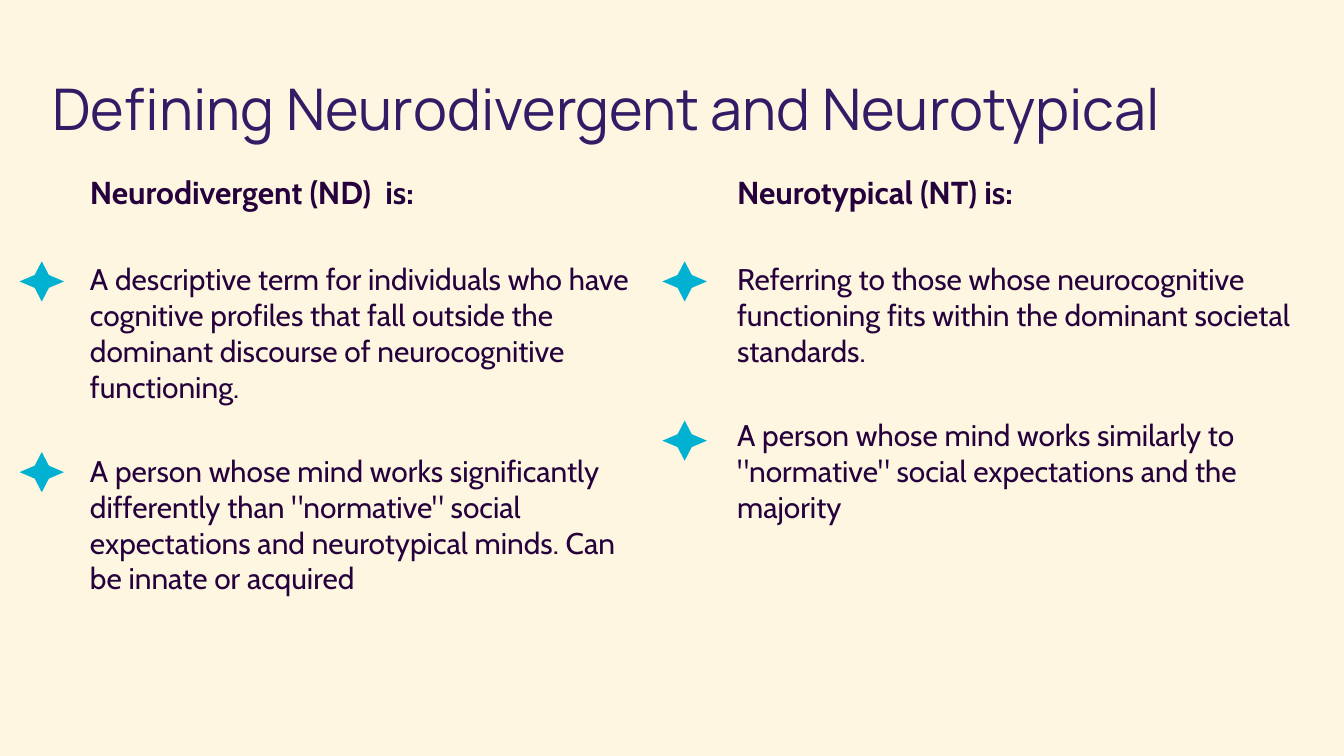
from pptx import Presentation
from pptx.dml.color import RGBColor
from pptx.enum.text import MSO_ANCHOR as Anchor
from pptx.util import Cm, Pt

CREAM = RGBColor(0xFE, 0xF6, 0xE0)
PURPLE = RGBColor(0x35, 0x1B, 0x65)
DARK_PURPLE = RGBColor(0x25, 0x00, 0x3C)
TURQUOISE = RGBColor(0x00, 0xB1, 0xD2)

TITLE_FONT, BODY_FONT = "Manrope", "Cabin"
STAR_WIDTH, STAR_HEIGHT = 1.68, 1.52
COLUMN_TOP, COLUMN_WIDTH = 6.4, 21.8
FIRST_STAR_TOP = 9.88

# text left, text height, star left, second star top, heading, definitions
COLUMNS = [
    (3.15, 19, 0.74, 17.09, "Neurodivergent (ND)  is:", [
        "A descriptive term for individuals who have cognitive profiles that "
        "fall outside the dominant discourse of neurocognitive functioning.",
        'A person whose mind works significantly differently than "normative" '
        "social expectations and neurotypical minds. Can be innate or acquired",
    ]),
    (27.61, 17.09, 25.04, 15.9, "Neurotypical (NT) is:", [
        "Referring to those whose neurocognitive functioning fits within the "
        "dominant societal standards.",
        'A person whose mind works similarly to "normative" social '
        "expectations and the majority",
    ]),
]


def add_text_frame(slide, left, top, width, height, anchor=Anchor.TOP):
    box = slide.shapes.add_textbox(Cm(left), Cm(top), Cm(width), Cm(height))
    frame = box.text_frame
    frame.word_wrap = True
    frame.vertical_anchor = anchor
    return frame


def add_run(paragraph, text, font_name, size, color, bold=False):
    run = paragraph.add_run()
    run.text = text
    run.font.name = font_name
    run.font.size = Pt(size)
    run.font.bold = bold
    run.font.color.rgb = color


def add_title(slide, text):
    frame = add_text_frame(slide, 1.73, 2.46, 47.35, 3.18, Anchor.MIDDLE)
    add_run(frame.paragraphs[0], text, TITLE_FONT, 61.5, PURPLE)


def add_definitions(slide, left, height, heading, definitions):
    frame = add_text_frame(slide, left, COLUMN_TOP, COLUMN_WIDTH, height)
    paragraph = frame.paragraphs[0]
    paragraph.space_before = Pt(6.4)
    add_run(paragraph, heading, BODY_FONT, 34, DARK_PURPLE, bold=True)
    for definition, gap in zip(definitions, (54, 51.5)):
        paragraph = frame.add_paragraph()
        paragraph.space_before = Pt(gap)
        add_run(paragraph, definition, BODY_FONT, 32, DARK_PURPLE)


def add_star(slide, left, top):
    """Draw a four-pointed star that marks one definition."""
    center_x, center_y = left + STAR_WIDTH / 2, top + STAR_HEIGHT / 2
    tip_x, tip_y = STAR_WIDTH / 2, STAR_HEIGHT / 2
    notch_x, notch_y = tip_x * 0.32, tip_y * 0.32
    offsets = [(0, -tip_y), (notch_x, -notch_y), (tip_x, 0), (notch_x, notch_y),
               (0, tip_y), (-notch_x, notch_y), (-tip_x, 0), (-notch_x, -notch_y)]
    points = [(Cm(center_x + x), Cm(center_y + y)) for x, y in offsets]
    builder = slide.shapes.build_freeform(*points[0])
    builder.add_line_segments(points[1:], close=True)
    star = builder.convert_to_shape()
    star.shadow.inherit = False
    star.fill.solid()
    star.fill.fore_color.rgb = TURQUOISE
    star.line.fill.background()


def main():
    presentation = Presentation()
    presentation.slide_width = Cm(50.8)
    presentation.slide_height = Cm(28.58)
    slide = presentation.slides.add_slide(presentation.slide_layouts[6])
    slide.background.fill.solid()
    slide.background.fill.fore_color.rgb = CREAM

    add_title(slide, "Defining Neurodivergent and Neurotypical")
    for text_left, height, star_left, second_top, heading, definitions in COLUMNS:
        add_definitions(slide, text_left, height, heading, definitions)
        for star_top in (FIRST_STAR_TOP, second_top):
            add_star(slide, star_left, star_top)

    presentation.save("out.pptx")


if __name__ == "__main__":
    main()
